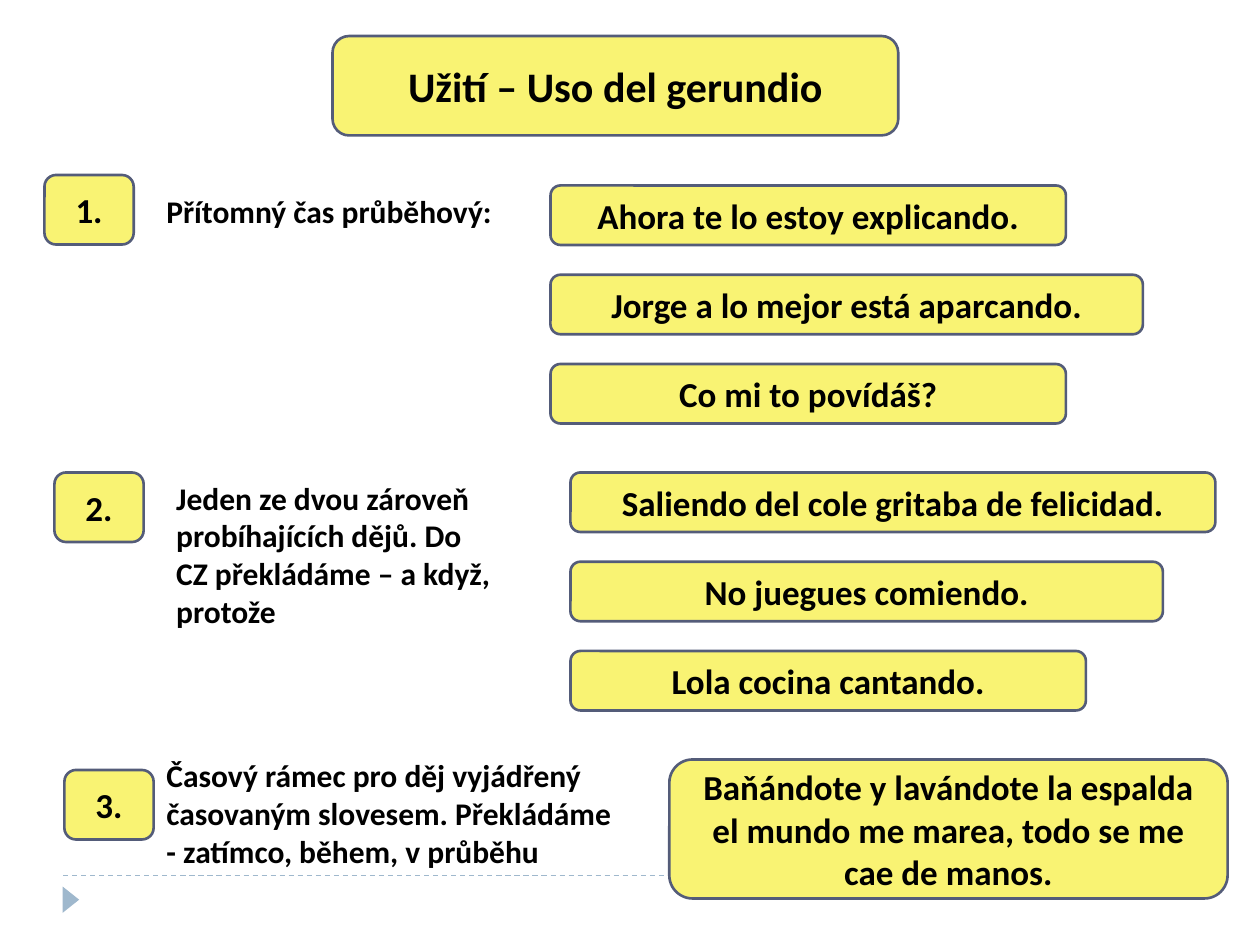
from dataclasses import dataclass

from lxml import etree
from pptx import Presentation
from pptx import util as u
from pptx.dml.color import RGBColor
from pptx.enum import dml, shapes, text
from pptx.oxml import ns


@dataclass(frozen=True)
class Theme:
    font: str = "Calibri"
    ink: RGBColor = RGBColor(0x00, 0x00, 0x00)
    card: RGBColor = RGBColor(0xF9, 0xF3, 0x73)
    border: RGBColor = RGBColor(0x54, 0x5C, 0x79)
    accent: RGBColor = RGBColor(0x9F, 0xB8, 0xCD)
    title_size: int = 24
    example_size: int = 20
    rule_size: int = 18


class Sheet:
    """Holds the theme and the slide being built."""

    def __init__(self, slide, theme):
        self.slide, self.theme = slide, theme

    def fill_text(self, frame, words, size, align):
        frame.text = words
        for line in frame.paragraphs:
            line.alignment = align
            for run in line.runs:
                run.font.name = self.theme.font
                run.font.size = u.Pt(size)
                run.font.bold = True
                run.font.color.rgb = self.theme.ink

    def card(self, left, top, width, height, words=""):
        box = self.slide.shapes.add_shape(
            shapes.MSO_SHAPE.ROUNDED_RECTANGLE, *map(u.Pt, (left, top, width, height)))
        box.shadow.inherit = False
        box.fill.solid()
        box.fill.fore_color.rgb = self.theme.card
        box.line.color.rgb = self.theme.border
        box.line.width = u.Pt(1.5)
        if words:
            box.text_frame.vertical_anchor = text.MSO_ANCHOR.MIDDLE
            self.fill_text(box.text_frame, words, self.theme.example_size,
                           text.PP_ALIGN.CENTER)

    def title(self, left, top, width, height, words):
        self.card(left, top, width, height)
        heading = self.slide.shapes.title
        heading.left, heading.top, heading.width, heading.height = map(
            u.Pt, (left, top, width, height))
        frame = heading.text_frame
        frame.auto_size = text.MSO_AUTO_SIZE.NONE
        frame.vertical_anchor = text.MSO_ANCHOR.MIDDLE
        self.fill_text(frame, words, self.theme.title_size, text.PP_ALIGN.CENTER)
        # Bring the heading in front of its card
        self.slide.shapes.element.append(heading.element)

    def rule(self, left, top, width, height, words):
        label = self.slide.shapes.add_textbox(*map(u.Pt, (left, top, width, height)))
        label.text_frame.word_wrap = False
        label.text_frame.auto_size = text.MSO_AUTO_SIZE.SHAPE_TO_FIT_TEXT
        self.fill_text(label.text_frame, words, self.theme.rule_size, text.PP_ALIGN.LEFT)

    def divider(self, left, right, top):
        dashes = self.slide.shapes.add_connector(
            shapes.MSO_CONNECTOR.STRAIGHT, *map(u.Pt, (left, top, right, top)))
        dashes.line.color.rgb = self.theme.accent
        dashes.line.width = u.Pt(0.75)
        dashes.line.dash_style = dml.MSO_LINE.DASH
        etree.SubElement(dashes.element.spPr, ns.qn("a:effectLst"))

    def pointer(self, left, top, width, height):
        marker = self.slide.shapes.add_shape(
            shapes.MSO_SHAPE.ISOSCELES_TRIANGLE, *map(u.Pt, (left, top, width, height)))
        marker.rotation = 90
        marker.shadow.inherit = False
        marker.fill.solid()
        marker.fill.fore_color.rgb = self.theme.accent
        marker.line.fill.background()


SHORT, MEDIUM, LONG = 294.5, 338.5, 368.5  # example card widths
EXAMPLE_HEIGHT, EXAMPLE_STEP = 34, 51
NUMBER_LEFT, NUMBER_TOP = 25.4, 100
NUMBER_SHIFT, SECTION_STEP = 5.7, 170

# Each section: rule box, rule lines, first example's corner, examples
SECTIONS = [
    ((88, 106, 225.4, 29), ["Přítomný čas průběhový:"], (314.6, 106),
     [(SHORT, EXAMPLE_HEIGHT, "Ahora te lo estoy explicando."),
      (MEDIUM, EXAMPLE_HEIGHT, "Jorge a lo mejor está aparcando."),
      (SHORT, EXAMPLE_HEIGHT, "Co mi to povídáš?")]),
    ((93.6, 270, 225.4, 94.5),
     ["Jeden ze dvou zároveň", "probíhajících dějů. Do", "CZ překládáme – a když,", "protože"],
     (326, 270),
     [(LONG, EXAMPLE_HEIGHT, "Saliendo del cole gritaba de felicidad."),
      (MEDIUM, EXAMPLE_HEIGHT, "No juegues comiendo."),
      (SHORT, EXAMPLE_HEIGHT, "Lola cocina cantando.")]),
    ((88, 428.5, 303.8, 72.7),
     ["Časový rámec pro děj vyjádřený", "časovaným slovesem. Překládáme",
      "- zatímco, během, v průběhu"],
     (382.5, 434),
     [(319, 79.4, "Baňándote y lavándote la espalda el mundo me marea, "
                  "todo se me cae de manos.")]),
]


def main():
    deck = Presentation()
    deck.slide_width, deck.slide_height = u.Pt(720), u.Pt(540)
    sheet = Sheet(deck.slides.add_slide(deck.slide_layouts[5]), Theme())

    # Footer decoration
    sheet.divider(36, 684, 500.4)
    sheet.pointer(33, 509.4, 15, 9.4)

    # Heading
    sheet.title(190, 20.6, 323.3, 56.8, "Užití – Uso del gerundio")

    # Numbered uses with their examples
    for index, (rule_box, rule_lines, (left, top), examples) in enumerate(SECTIONS):
        sheet.card(NUMBER_LEFT + index * NUMBER_SHIFT, NUMBER_TOP + index * SECTION_STEP,
                   51, 39.7, f"{index + 1}.")
        sheet.rule(*rule_box, "\n".join(rule_lines))
        for row, (width, height, sentence) in enumerate(examples):
            sheet.card(left, top + row * EXAMPLE_STEP, width, height, sentence)

    deck.save("out.pptx")


if __name__ == "__main__":
    main()
